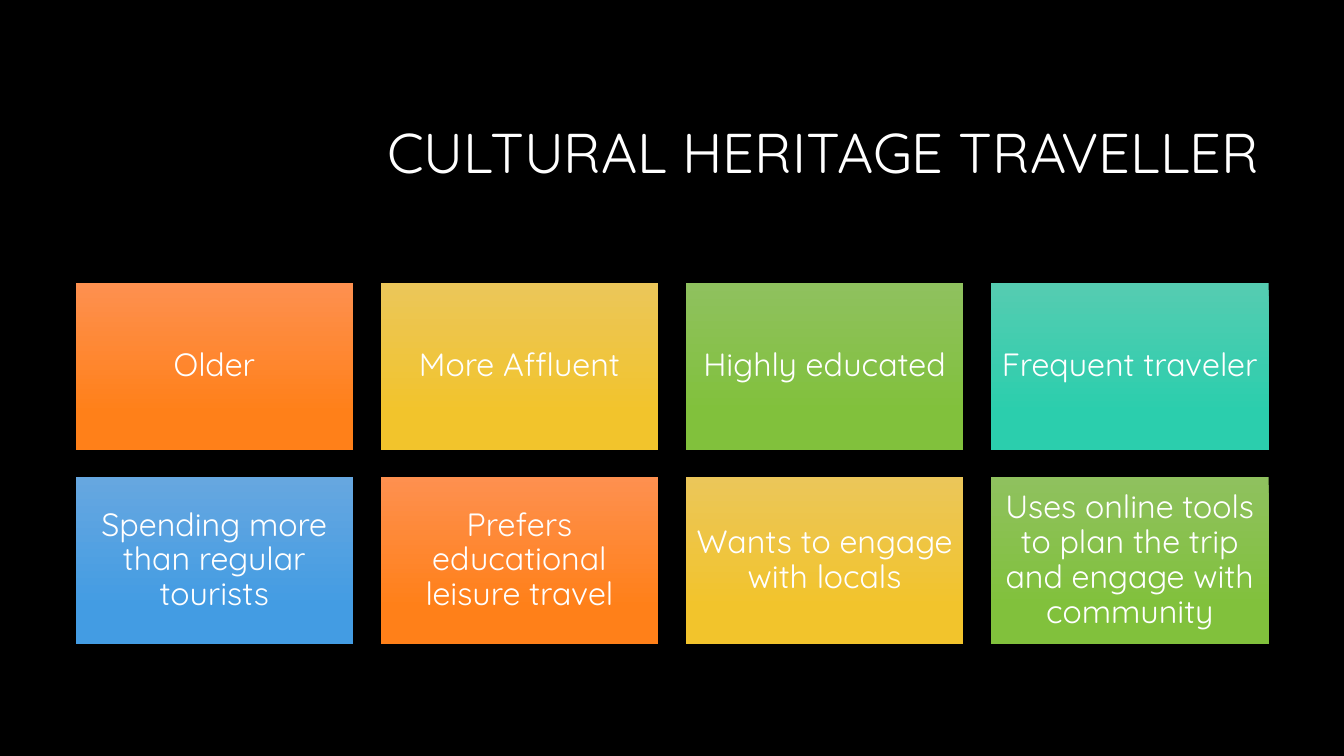
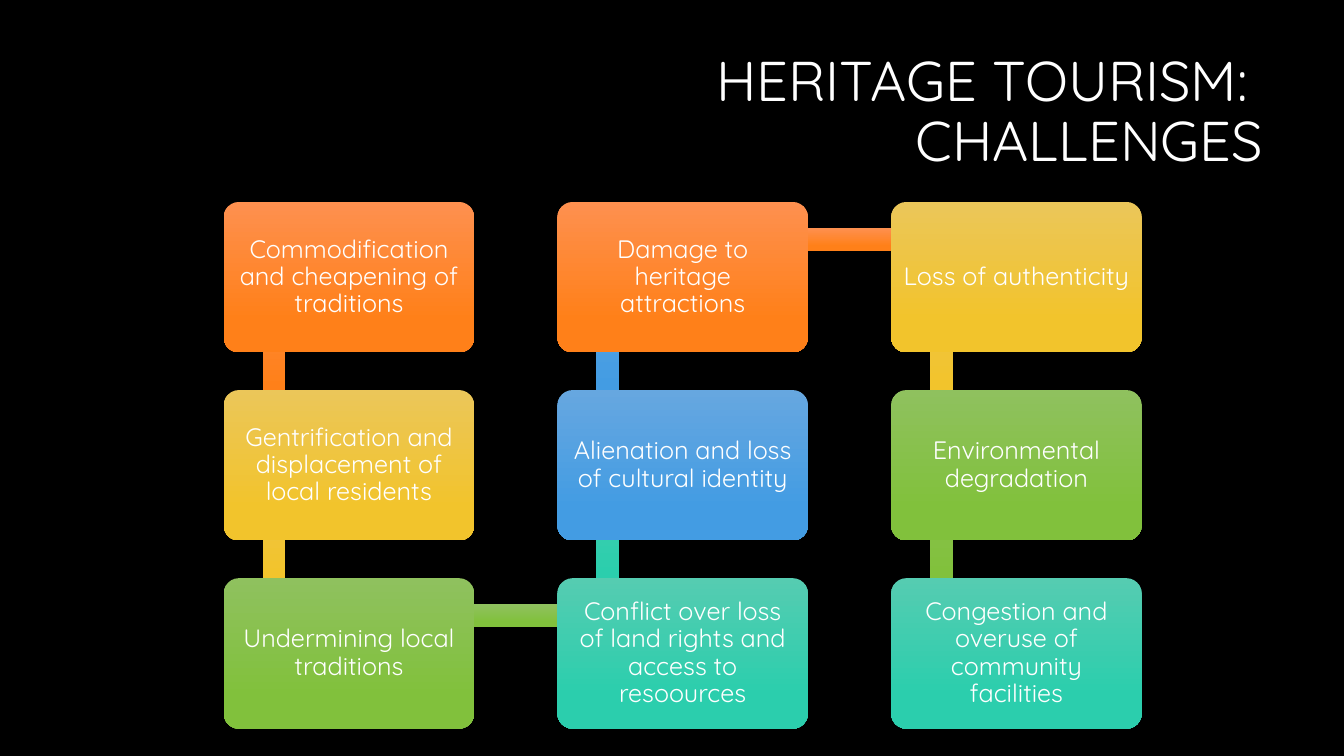
from itertools import cycle, pairwise

from pptx import Presentation
from pptx.dml.color import RGBColor
from pptx.enum.shapes import MSO_SHAPE
from pptx.enum.text import MSO_ANCHOR, MSO_AUTO_SIZE, PP_ALIGN
from pptx.oxml.ns import qn
from pptx.util import Cm, Pt

FONT = "Quicksand"
TITLE_SIZE = 40
COLORS = {"background": "000000", "text": "FFFFFF"}
# Top and bottom colour of each gradient, in the order the boxes use them
GRADIENTS = {
    "orange": ("FE904F", "FF8019"),
    "yellow": ("EBC659", "F2C42C"),
    "green": ("8FC15E", "81C13C"),
    "teal": ("55CCB1", "2BCEAD"),
    "blue": ("66A7E0", "439CE3"),
}

TRAVELLER_TRAITS = [
    "Older",
    "More Affluent",
    "Highly educated",
    "Frequent traveler",
    "Spending more than regular tourists",
    "Prefers educational leisure travel",
    "Wants to engage with locals",
    "Uses online tools to plan the trip and engage with community",
]
# In the order of the winding path: down, up, down
CHALLENGES = [
    "Commodification and cheapening of traditions",
    "Gentrification and displacement of local residents",
    "Undermining local traditions",
    "Conflict over loss of land rights and access to resoources",
    "Alienation and loss of cultural identity",
    "Damage to heritage attractions",
    "Loss of authenticity",
    "Environmental degradation",
    "Congestion and overuse of community facilities",
]


def write_text(shape, text, size=18, align=PP_ALIGN.CENTER, inset=0.25):
    """Fill a shape with one paragraph of formatted text."""
    frame = shape.text_frame
    frame.word_wrap = True
    frame.auto_size = MSO_AUTO_SIZE.NONE
    frame.vertical_anchor = MSO_ANCHOR.MIDDLE
    frame.margin_left = frame.margin_right = Cm(inset)
    frame.margin_top = frame.margin_bottom = Cm(inset)
    frame.text = text
    paragraph = frame.paragraphs[0]
    paragraph.alignment = align
    paragraph.line_spacing = 0.9
    for run in paragraph.runs:
        run.font.name = FONT
        run.font.size = Pt(size)
        run.font.color.rgb = RGBColor.from_string(COLORS["text"])


def add_block(slide, kind, box, gradient):
    """Add a borderless shape with a vertical gradient."""
    shape = slide.shapes.add_shape(kind, *(Cm(length) for length in box))
    shape.shadow.inherit = False
    shape.line.fill.background()
    shape.fill.gradient()
    shape.fill.gradient_angle = 270
    for stop, color, position in zip(shape.fill.gradient_stops, GRADIENTS[gradient], (0, 0.78)):
        stop.color.rgb = RGBColor.from_string(color)
        stop.position = position
    return shape


def style_master(presentation):
    """Set the background and title size that all slides share."""
    master = presentation.slide_master
    master.background.fill.solid()
    master.background.fill.fore_color.rgb = RGBColor.from_string(COLORS["background"])
    title_style = next(master.element.iter(qn("p:titleStyle")))
    next(title_style.iter(qn("a:defRPr"))).set("sz", str(TITLE_SIZE * 100))


def add_titled_slide(presentation, text, left, top):
    slide = presentation.slides.add_slide(presentation.slide_layouts[5])
    title = slide.shapes.title
    title.left, title.top, title.width, title.height = Cm(left), Cm(top), Cm(23.93), Cm(3.58)
    write_text(title, text, size=TITLE_SIZE, align=PP_ALIGN.RIGHT)
    return slide


def add_tile_grid(slide, texts, left, top, columns=4):
    """Place tiles row by row with equal gaps."""
    width, height, gap = 6.99, 4.19, 0.7
    for index, (text, gradient) in enumerate(zip(texts, cycle(GRADIENTS))):
        row, column = divmod(index, columns)
        box = (left + column * (width + gap), top + row * (height + gap), width, height)
        tile = add_block(slide, MSO_SHAPE.RECTANGLE, box, gradient)
        write_text(tile, text, size=23, inset=0.24)


def add_winding_path(slide, texts, left, top, rows=3):
    """Place boxes column by column, alternately down and up, joined by bars."""
    width, height, thickness = 6.31, 3.79, 0.57
    pitch_x, pitch_y = 8.41, 4.74
    corners = []
    for index in range(len(texts)):
        column, step = divmod(index, rows)
        row = rows - 1 - step if column % 2 else step
        corners.append((left + column * pitch_x, top + row * pitch_y))

    # Bars run between the same inner point of neighbouring boxes
    for (start, end), gradient in zip(pairwise(corners), cycle(GRADIENTS)):
        across, down = abs(end[0] - start[0]), abs(end[1] - start[1])
        bar = (
            min(start[0], end[0]) + width / 5 - (0 if across else thickness / 2),
            min(start[1], end[1]) + height / 4 - (0 if down else thickness / 2),
            across or thickness,
            down or thickness,
        )
        add_block(slide, MSO_SHAPE.RECTANGLE, bar, gradient)

    # Boxes cover the ends of the bars
    for corner, text, gradient in zip(corners, texts, cycle(GRADIENTS)):
        box = add_block(slide, MSO_SHAPE.ROUNDED_RECTANGLE, (*corner, width, height), gradient)
        box.adjustments[0] = 0.1
        write_text(box, text, size=18, inset=0.18)


def main():
    presentation = Presentation()
    presentation.slide_width, presentation.slide_height = Cm(33.87), Cm(19.05)
    style_master(presentation)

    traveller = add_titled_slide(presentation, "CULTURAL HERITAGE TRAVELLER", left=8.05, top=2.13)
    add_tile_grid(traveller, TRAVELLER_TRAITS, left=1.91, top=7.14)

    challenges = add_titled_slide(presentation, "HERITAGE TOURISM: \vCHALLENGES", left=8.15, top=1.07)
    add_winding_path(challenges, CHALLENGES, left=5.64, top=5.09)

    presentation.save("out.pptx")


if __name__ == "__main__":
    main()
